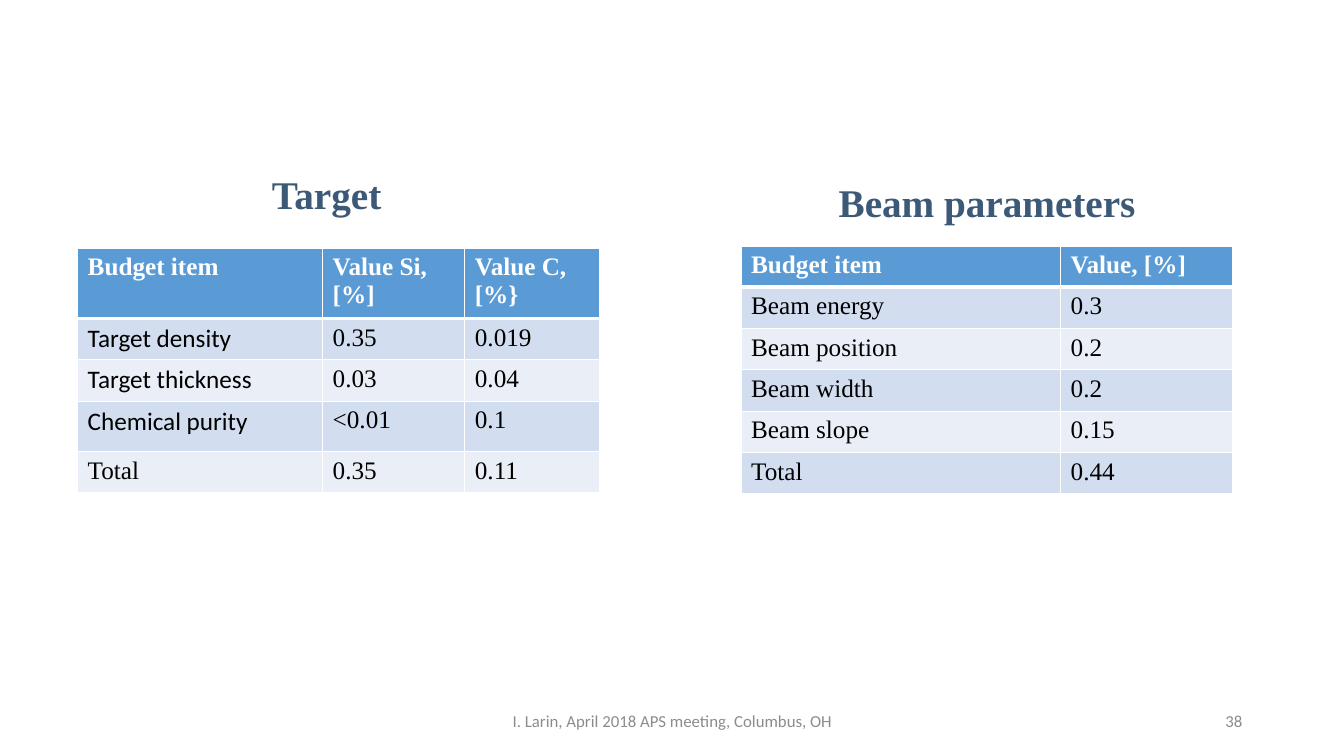
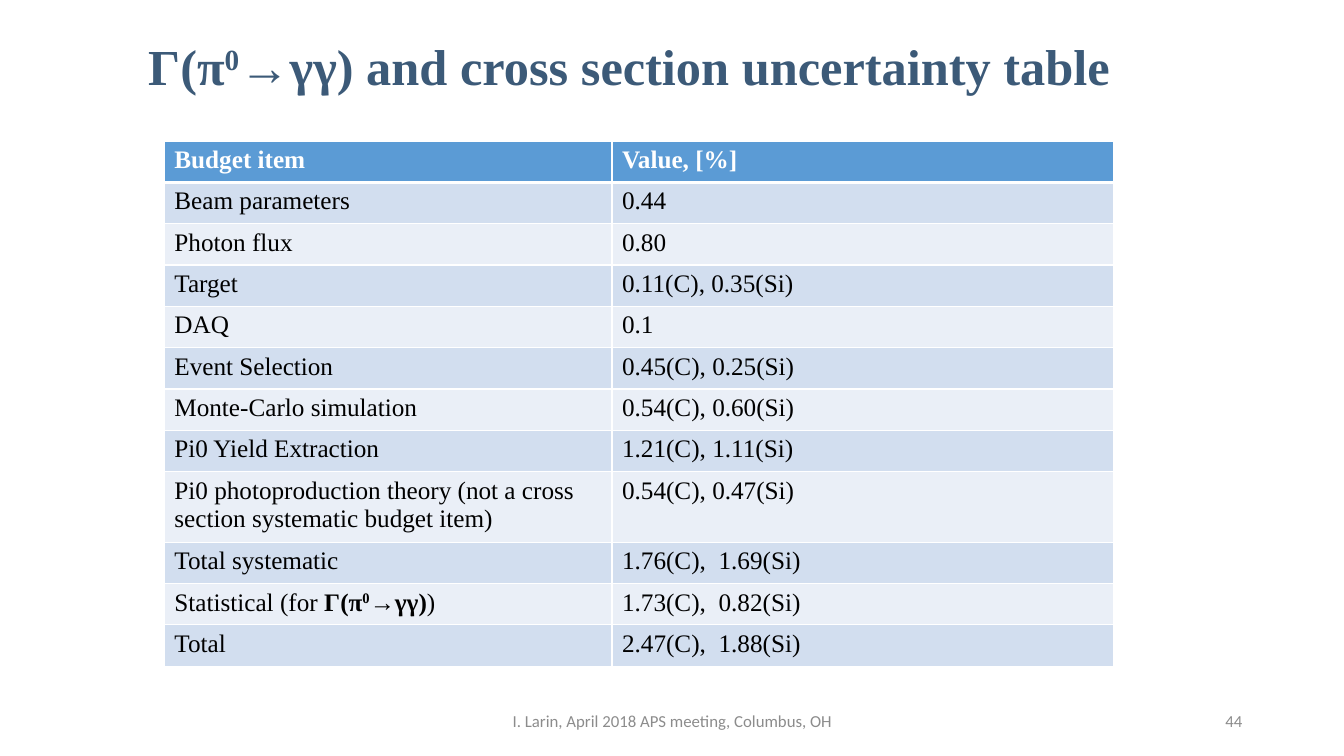
from dataclasses import dataclass

from lxml.etree import SubElement
from pptx import Presentation
from pptx.dml.color import RGBColor
from pptx.enum.text import MSO_ANCHOR, MSO_AUTO_SIZE, PP_ALIGN
from pptx.oxml.ns import qn
from pptx.util import Inches, Pt


@dataclass(frozen=True)
class Theme:
    heading: str = "3C5A78"
    header_fill: str = "5B9BD5"
    bands: tuple = ("D2DEEF", "EAEFF7")
    white: str = "FFFFFF"
    body: str = "000000"
    footer: str = "8C8C8C"
    serif: str = "Times New Roman"
    sans: str = "Calibri"
    title_size: int = 36
    subtitle_size: int = 28
    table_size: int = 18
    footer_size: int = 12


THEME = Theme()
FOOTER_TEXT = "I. Larin, April 2018 APS meeting, Columbus, OH"
ROW_HEIGHT = 0.41
TALL_ROW = 0.65

# Rich text is a list of (text, bold, superscript) pieces.
DECAY_TITLE = [("Γ(π", True, False), ("0", True, True),
               ("→γγ) and cross section uncertainty table", True, False)]
DECAY_ROW = [("Statistical (for ", False, False), ("Γ(π", True, False),
             ("0", True, True), ("→γγ)", True, False), (")", False, False)]

TARGET_ROWS = [
    ("Budget item", "Value Si, [%]", "Value C, [%}"),
    ("Target density", "0.35", "0.019"),
    ("Target thickness", "0.03", "0.04"),
    ("Chemical purity", "<0.01", "0.1"),
    ("Total", "0.35", "0.11"),
]
BEAM_ROWS = [
    ("Budget item", "Value, [%]"),
    ("Beam energy", "0.3"),
    ("Beam position", "0.2"),
    ("Beam width", "0.2"),
    ("Beam slope", "0.15"),
    ("Total", "0.44"),
]
UNCERTAINTY_ROWS = [
    ("Budget item", "Value, [%]"),
    ("Beam parameters", "0.44"),
    ("Photon flux", "0.80"),
    ("Target", "0.11(C), 0.35(Si)"),
    ("DAQ", "0.1"),
    ("Event Selection", "0.45(C), 0.25(Si)"),
    ("Monte-Carlo simulation", "0.54(C), 0.60(Si)"),
    ("Pi0 Yield Extraction", "1.21(C), 1.11(Si)"),
    ("Pi0 photoproduction theory (not a cross section systematic budget item)",
     "0.54(C), 0.47(Si)"),
    ("Total systematic", "1.76(C),  1.69(Si)"),
    (DECAY_ROW, "1.73(C),  0.82(Si)"),
    ("Total", "2.47(C),  1.88(Si)"),
]


def write_text(paragraph, content, size, color, font=THEME.serif, bold=False):
    """Write a plain string or a list of rich text pieces."""
    pieces = [(content, bold, False)] if isinstance(content, str) else content
    for text, piece_bold, superscript in pieces:
        run = paragraph.add_run()
        run.text = text
        run.font.name = font
        run.font.size = Pt(size)
        run.font.bold = piece_bold
        run.font.color.rgb = RGBColor.from_string(color)
        if superscript:
            run.font._element.set("baseline", "30000")


def place(shape, box):
    shape.left, shape.top, shape.width, shape.height = map(Inches, box)


def add_text_box(slide, box):
    shape = slide.shapes.add_textbox(*map(Inches, box))
    shape.text_frame.word_wrap = True
    shape.text_frame.vertical_anchor = MSO_ANCHOR.MIDDLE
    return shape


def format_heading(shape, content, size, alignment):
    frame = shape.text_frame
    frame.word_wrap = True
    frame.vertical_anchor = MSO_ANCHOR.MIDDLE
    frame.auto_size = MSO_AUTO_SIZE.SHAPE_TO_FIT_TEXT
    paragraph = frame.paragraphs[0]
    paragraph.alignment = alignment
    paragraph.line_spacing = 0.9
    write_text(paragraph, content, size, THEME.heading, bold=True)


def add_footer(slide, number):
    for box, text, alignment in (
        ((4.42, 6.95, 4.5, 0.4), FOOTER_TEXT, PP_ALIGN.CENTER),
        ((9.42, 6.95, 3, 0.4), str(number), PP_ALIGN.RIGHT),
    ):
        paragraph = add_text_box(slide, box).text_frame.paragraphs[0]
        paragraph.alignment = alignment
        write_text(paragraph, text, THEME.footer_size, THEME.footer, THEME.sans)


def add_titled_slide(presentation, number, title, box, size, alignment):
    slide = presentation.slides.add_slide(presentation.slide_layouts[5])
    place(slide.shapes.title, box)
    format_heading(slide.shapes.title, title, size, alignment)
    add_footer(slide, number)
    return slide


def set_borders(cell, bottom_width):
    properties = cell._tc.get_or_add_tcPr()
    widths = {"a:lnL": 1, "a:lnR": 1, "a:lnT": 1, "a:lnB": bottom_width}
    for position, (side, width) in enumerate(widths.items()):
        line = SubElement(properties, qn(side), w=str(Pt(width)))
        fill = SubElement(line, qn("a:solidFill"))
        SubElement(fill, qn("a:srgbClr"), val=THEME.white)
        properties.insert(position, line)


def add_budget_table(slide, left, top, column_widths, rows,
                     row_heights=None, sans_labels=()):
    """Add a banded table; row_heights maps row numbers to special heights."""
    heights = [(row_heights or {}).get(i, ROW_HEIGHT) for i in range(len(rows))]
    box = (left, top, sum(column_widths), sum(heights))
    table = slide.shapes.add_table(
        len(rows), len(column_widths), *map(Inches, box)).table
    for column, width in zip(table.columns, column_widths):
        column.width = Inches(width)
    for row_index, values in enumerate(rows):
        header = row_index == 0
        table.rows[row_index].height = Inches(heights[row_index])
        fill = THEME.header_fill if header else THEME.bands[(row_index - 1) % 2]
        color = THEME.white if header else THEME.body
        for column_index, content in enumerate(values):
            cell = table.cell(row_index, column_index)
            cell.fill.solid()
            cell.fill.fore_color.rgb = RGBColor.from_string(fill)
            set_borders(cell, 3 if header else 1)
            font = THEME.sans if content in sans_labels else THEME.serif
            write_text(cell.text_frame.paragraphs[0], content,
                       THEME.table_size, color, font, bold=header)


def build_target_and_beam(presentation):
    slide = add_titled_slide(presentation, 38, "Target", (1.33, 1.69, 3.82, 0.53),
                             THEME.subtitle_size, PP_ALIGN.CENTER)
    add_budget_table(slide, 0.77, 2.46, (2.43, 1.41, 1.34), TARGET_ROWS,
                     {0: TALL_ROW, 3: 0.5},
                     ("Target density", "Target thickness", "Chemical purity"))
    format_heading(add_text_box(slide, (7.88, 1.77, 3.82, 0.53)),
                   "Beam parameters", THEME.subtitle_size, PP_ALIGN.CENTER)
    add_budget_table(slide, 7.35, 2.44, (3.17, 1.71), BEAM_ROWS)


def build_uncertainty(presentation):
    slide = add_titled_slide(presentation, 44, DECAY_TITLE, (1.37, 0.36, 9.95, 0.65),
                             THEME.title_size, PP_ALIGN.LEFT)
    add_budget_table(slide, 1.63, 1.4, (4.44, 4.98), UNCERTAINTY_ROWS, {8: TALL_ROW})


def main():
    presentation = Presentation()
    presentation.slide_width = Inches(13.33)
    presentation.slide_height = Inches(7.5)
    build_target_and_beam(presentation)
    build_uncertainty(presentation)
    presentation.save("out.pptx")


if __name__ == "__main__":
    main()
